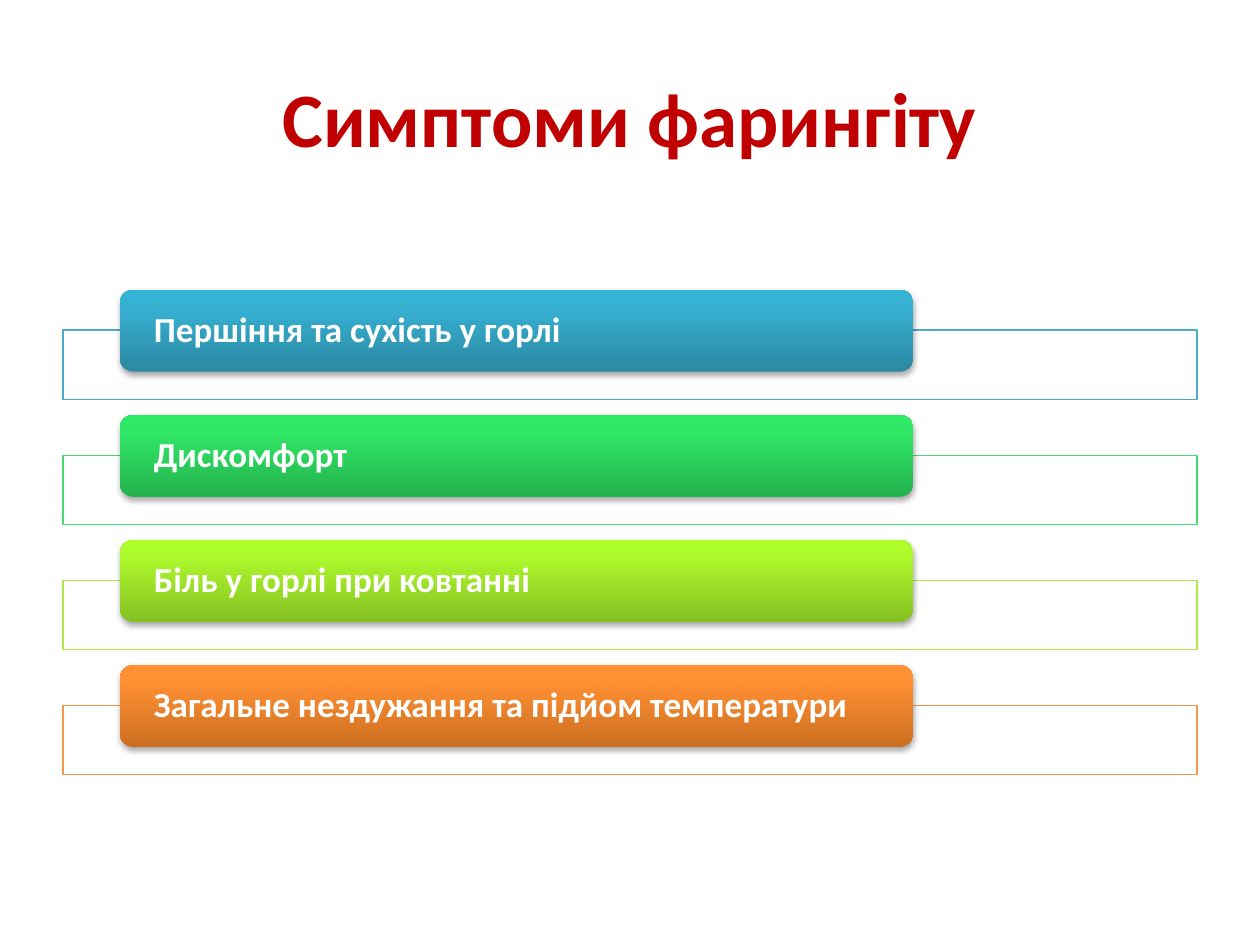
from lxml.etree import SubElement
from pptx import Presentation
from pptx.dml.color import RGBColor
from pptx.enum.shapes import MSO_SHAPE
from pptx.enum.text import MSO_ANCHOR, PP_ALIGN
from pptx.oxml.ns import qn
from pptx.util import Inches, Pt


def color(value):
    return RGBColor.from_string(value)


def add_element(parent, tag, **attributes):
    """Append a DrawingML child element and return it."""
    return SubElement(parent, qn(tag), {key: str(value) for key, value in attributes.items()})


# Text, frame line, then gradient colours from bottom to top
symptoms = [
    ("Першіння та сухість у горлі", "4BACC6", ("2A88A2", "37B1D2", "34B4D6")),
    ("Дискомфорт", "47D872", ("25B24E", "30E765", "2DEB64")),
    ("Біль у горлі при ковтанні", "ACE946", ("85C022", "ADF92C", "AFFE28")),
    ("Загальне нездужання та підйом температури", "F79646", ("CC6E20", "FF9034", "FF9136")),
]
gradient_positions = (0, 80000, 100000)
first_top, row_step = 2.3, 0.993

presentation = Presentation()
presentation.slide_width = Inches(10)
presentation.slide_height = Inches(7.5)
slide = presentation.slides.add_slide(presentation.slide_layouts[5])

title = slide.shapes.title
title.left, title.top = Inches(0.5), Inches(0.3)
title.width, title.height = Inches(9), Inches(1.25)
title.text_frame.text = "Симптоми фарингіту"
title.text_frame.vertical_anchor = MSO_ANCHOR.MIDDLE
paragraph = title.text_frame.paragraphs[0]
paragraph.alignment = PP_ALIGN.CENTER
paragraph.font.name = "Calibri"
paragraph.font.size = Pt(44)
paragraph.font.bold = True
paragraph.font.color.rgb = color("C00000")

for index, (text, line_color, gradient_colors) in enumerate(symptoms):
    top = first_top + index * row_step

    frame = slide.shapes.add_shape(
        MSO_SHAPE.RECTANGLE, Inches(0.5), Inches(top + 0.32), Inches(9), Inches(0.55))
    frame.shadow.inherit = False
    frame.fill.solid()
    frame.fill.fore_color.rgb = color("FFFFFF")
    add_element(frame.element.spPr.find(".//" + qn("a:srgbClr")), "a:alpha", val=90000)
    frame.line.color.rgb = color(line_color)
    frame.line.width = Pt(0.75)

    label = slide.shapes.add_shape(
        MSO_SHAPE.ROUNDED_RECTANGLE, Inches(0.95), Inches(top), Inches(6.3), Inches(0.65))
    label.line.fill.background()
    label.fill.gradient()
    label.fill.gradient_angle = 90
    properties = label.element.spPr
    stops = properties.find(".//" + qn("a:gsLst"))
    for stop in list(stops):
        stops.remove(stop)
    for position, stop_color in zip(gradient_positions, gradient_colors):
        add_element(add_element(stops, "a:gs", pos=position), "a:srgbClr", val=stop_color)

    label.shadow.inherit = False
    shadow = add_element(properties.find(qn("a:effectLst")), "a:outerShdw",
                         blurRad=Pt(3.15), dist=Pt(1.8), dir=5400000, rotWithShape=0)
    add_element(add_element(shadow, "a:srgbClr", val="000000"), "a:alpha", val=35000)

    text_frame = label.text_frame
    text_frame.word_wrap = True
    text_frame.vertical_anchor = MSO_ANCHOR.MIDDLE
    text_frame.margin_left = text_frame.margin_right = Inches(0.24)
    text_frame.margin_top = text_frame.margin_bottom = 0
    text_frame.text = text
    paragraph = text_frame.paragraphs[0]
    paragraph.alignment = PP_ALIGN.LEFT
    paragraph.line_spacing = 0.9
    paragraph.font.name = "Calibri"
    paragraph.font.size = Pt(20)
    paragraph.font.bold = True
    paragraph.font.color.rgb = color("FFFFFF")

presentation.save("out.pptx")
